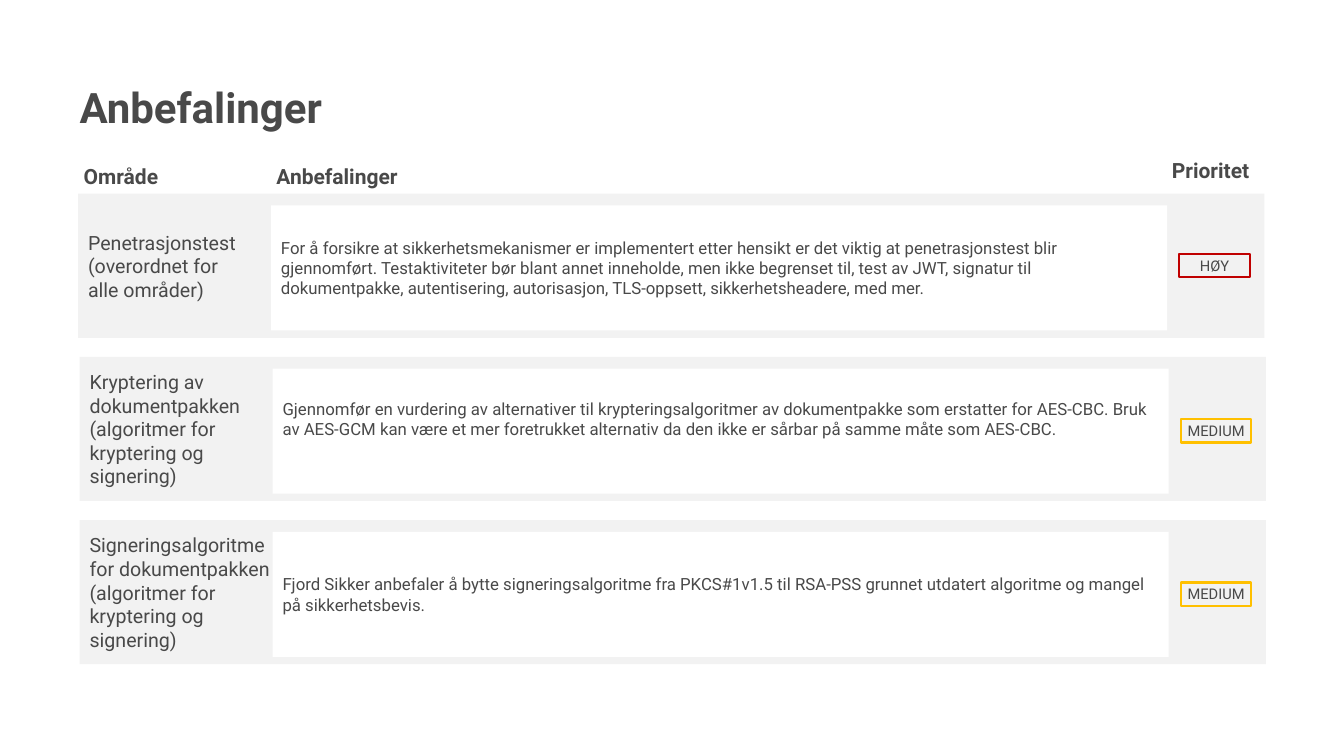
from pptx import Presentation
from pptx.dml.color import RGBColor
from pptx.enum import shapes, text
from pptx.util import Pt

GREY, PANEL, WHITE, RED, AMBER = "494949", "F2F2F2", "FFFFFF", "C00000", "FFC000"
LEFT, CENTER = text.PP_ALIGN.LEFT, text.PP_ALIGN.CENTER
TOP, MIDDLE = text.MSO_ANCHOR.TOP, text.MSO_ANCHOR.MIDDLE


def rgb(value):
    return RGBColor.from_string(value)


def add_text(words, x, y, w, h, size, bold=False, align=LEFT, anchor=MIDDLE,
             inset=(7.2, 3.6, 7.2, 3.6), shape=False, fill=None, line=None):
    """Add a text box, or a rectangle if shape is set; inset is left, top, right, bottom."""
    box = [Pt(v) for v in (x, y, w, h)]
    if shape:
        sp = s.shapes.add_shape(shapes.MSO_SHAPE.RECTANGLE, *box)
        sp.shadow.inherit = False
    else:
        sp = s.shapes.add_textbox(*box)
    if fill:
        sp.fill.solid()
        sp.fill.fore_color.rgb = rgb(fill)
    else:
        sp.fill.background()
    if line:
        sp.line.color.rgb = rgb(line)
        sp.line.width = Pt(1.5)
    else:
        sp.line.fill.background()
    tf = sp.text_frame
    tf.word_wrap = True
    tf.vertical_anchor = anchor
    tf.margin_left, tf.margin_top, tf.margin_right, tf.margin_bottom = map(Pt, inset)
    tf.text = words
    for p in tf.paragraphs:
        p.alignment = align
        for r in p.runs:
            r.font.name = "Roboto"
            r.font.size = Pt(size)
            r.font.bold = bold
            r.font.color.rgb = rgb(GREY)


prs = Presentation()
prs.slide_width, prs.slide_height = Pt(960), Pt(540)
s = prs.slides.add_slide(prs.slide_layouts[6])

add_text("Anbefalinger", 56.9, 58.3, 846.7, 43.2, 30, bold=True, anchor=TOP,
         inset=(0, 0, 0, 0))

headings = [
    ("Område", 56.9, 115.2, 99.4, 21.6, LEFT),
    ("Anbefalinger", 194.6, 114, 307.4, 23, LEFT),
    ("Prioritet", 825.8, 110.2, 77.8, 23, CENTER),
]
for words, x, y, w, h, align in headings:
    add_text(words, x, y, w, h, 15, bold=True, align=align, inset=(2.9, 3.6, 2.9, 3.6))

# area, recommendation, priority, colour, left edge, badge offset, bottom inset
rows = [
    ("Penetrasjonstest\n(overordnet for\nalle områder)",
     "For å forsikre at sikkerhetsmekanismer er implementert etter hensikt er det viktig "
     "at penetrasjonstest blir gjennomført. Testaktiviteter bør blant annet inneholde, "
     "men ikke begrenset til, test av JWT, signatur til dokumentpakke, autentisering, "
     "autorisasjon, TLS-oppsett, sikkerhetsheadere, med mer.",
     "HØY", RED, 55.8, 43.2, 3.6),
    ("Kryptering av\ndokumentpakken\n(algoritmer for\nkryptering og\nsignering)",
     "Gjennomfør en vurdering av alternativer til krypteringsalgoritmer av dokumentpakke "
     "som erstatter for AES-CBC. Bruk av AES-GCM kan være et mer foretrukket alternativ "
     "da den ikke er sårbar på samme måte som AES-CBC.",
     "MEDIUM", AMBER, 56.9, 44.6, 21),
    ("Signeringsalgoritme\nfor dokumentpakken\n(algoritmer for\nkryptering og\nsignering)",
     "Fjord Sikker anbefaler å bytte signeringsalgoritme fra PKCS#1v1.5 til RSA-PSS "
     "grunnet utdatert algoritme og mangel på sikkerhetsbevis.",
     "MEDIUM", AMBER, 56.9, 44.6, 3.6),
]
for i, (area, advice, priority, color, x, badge_dy, bottom) in enumerate(rows):
    y = 138.3 + i * 116.6
    add_text(area, x, y, 847.4, 103, 14, shape=True, fill=PANEL)
    add_text(advice, x + 137.8, y + 8.4, 640.1, 89.3, 12, shape=True, fill=WHITE,
             inset=(7.2, 3.6, 7.2, bottom))
    add_text(priority, x + 786.6, y + badge_dy, 50.4, 16.6, 10.5, align=CENTER,
             shape=True, line=color, inset=(0, 3.6, 0, 3.6))

prs.save("out.pptx")
